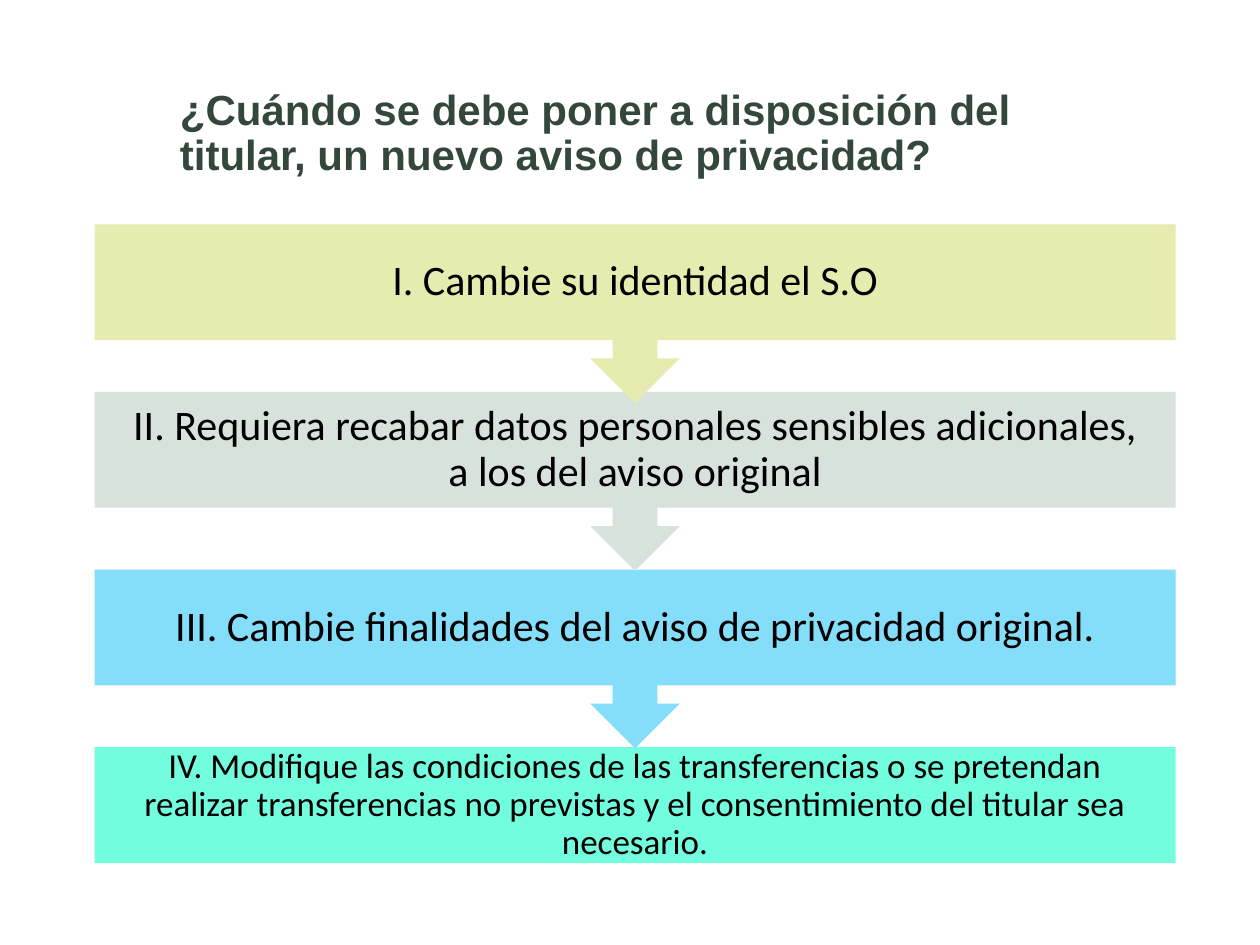
from pptx import Presentation
from pptx.dml.color import RGBColor
from pptx.enum.shapes import MSO_SHAPE
from pptx.enum.text import MSO_ANCHOR, PP_ALIGN
from pptx.util import Inches, Pt

RECT = MSO_SHAPE.RECTANGLE
CALLOUT = MSO_SHAPE.DOWN_ARROW_CALLOUT
MIDDLE = MSO_ANCHOR.MIDDLE
LEFT, CENTER = PP_ALIGN.LEFT, PP_ALIGN.CENTER

GREEN = RGBColor(0x34, 0x47, 0x3D)
BLACK = RGBColor(0, 0, 0)
LIME = RGBColor(0xE6, 0xEC, 0xB0)
GRAY = RGBColor(0xD7, 0xE2, 0xDC)
SKY = RGBColor(0x84, 0xDD, 0xF9)
MINT = RGBColor(0x72, 0xFD, 0xDF)

TITLE = ("¿Cuándo se debe poner a disposición del titular, "
         "un nuevo aviso de privacidad?")
BODY, FULL = 0.92, 1.42  # step height without and with its arrow

# top offset, fill, text size, text
STEPS = [
    (0, LIME, 24, "I. Cambie su identidad el S.O"),
    (1.33, GRAY, 24, "II. Requiera recabar datos personales sensibles "
                     "adicionales, a los del aviso original"),
    (2.74, SKY, 24, "III. Cambie finalidades del aviso de privacidad original."),
    (4.15, MINT, 20, "IV. Modifique las condiciones de las transferencias o se "
                     "pretendan realizar transferencias no previstas y el "
                     "consentimiento del titular sea necesario."),
]


def write(shape, text, face, size, color, align, bold=False):
    frame = shape.text_frame
    frame.word_wrap = True
    frame.vertical_anchor = MIDDLE
    para = frame.paragraphs[0]
    para.text = text
    para.alignment = align
    para.line_spacing = 0.9
    font = para.font
    font.name, font.size, font.bold = face, Pt(size), bold
    font.color.rgb = color
    return frame


def add_title(slide, x, y, w, h):
    box = slide.shapes.add_textbox(Inches(x), Inches(y), Inches(w), Inches(h))
    write(box, TITLE, "Arial", 24, GREEN, LEFT, bold=True)


def add_steps(slide, x, y, w):
    """Stack the steps from last to first, so each arrow overlaps the next step."""
    last = STEPS[-1]
    for step in reversed(STEPS):
        top, fill, size, text = step
        kind, high = (RECT, BODY) if step is last else (CALLOUT, FULL)
        shape = slide.shapes.add_shape(
            kind, Inches(x), Inches(y + top), Inches(w), Inches(high))
        shape.shadow.inherit = False
        shape.fill.solid()
        shape.fill.fore_color.rgb = fill
        shape.line.fill.background()
        if kind == CALLOUT:
            shape.adjustments[3] = BODY / FULL
        frame = write(shape, text, "Calibri", size, BLACK, CENTER)
        frame.margin_left = frame.margin_right = Inches(size / 125)
        frame.margin_top = frame.margin_bottom = 0


def main():
    deck = Presentation()
    deck.slide_width, deck.slide_height = Inches(10), Inches(7.5)
    slide = deck.slides.add_slide(deck.slide_layouts[6])
    add_title(slide, 1.33, 0.44, 7.6, 1.25)
    add_steps(slide, 0.75, 1.78, 8.58)
    deck.save("out.pptx")


if __name__ == "__main__":
    main()
